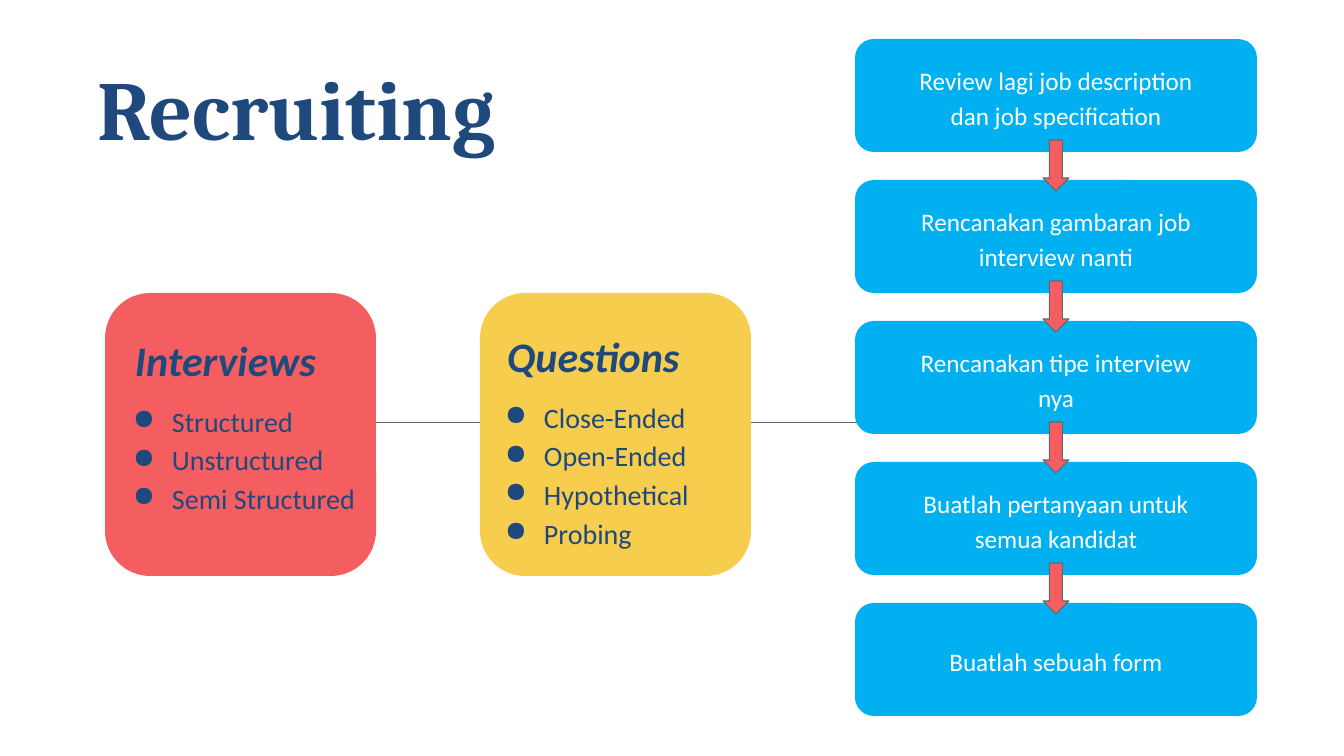
from lxml.etree import SubElement
from pptx import Presentation
from pptx.dml.color import RGBColor
from pptx.enum.shapes import MSO_CONNECTOR as Line, MSO_SHAPE as Kind
from pptx.enum.text import MSO_ANCHOR as Anchor, PP_ALIGN as Align
from pptx.oxml.ns import qn
from pptx.util import Emu, Pt

INK = {
    "navy": "1F497D",
    "red": "F55E61",
    "gold": "F6CD4C",
    "blue": "00B0F0",
    "grey": "5E696C",
    "white": "FFFFFF",
}
STEPS = [
    "Review lagi job description dan job specification",
    "Rencanakan gambaran job interview nanti",
    "Rencanakan tipe interview nya",
    "Buatlah pertanyaan untuk semua kandidat",
    "Buatlah sebuah form",
]
CARDS = [
    ("Interviews", ["Structured", "Unstructured", "Semi Structured"], "red", 105, 20, 24),
    ("Questions", ["Close-Ended", "Open-Ended", "Hypothetical", "Probing"], "gold", 480, 17, 20),
]


def px(n):
    return Emu(round(n * 914400 / 100.8))


def tint(name):
    return RGBColor.from_string(INK[name])


def write(shape, lines, size, color="navy", font="Calibri", bold=False, slant=False,
          align=Align.LEFT, anchor=Anchor.TOP, pad=(10, 10), space=1.15, dots=False):
    frame = shape.text_frame
    frame.word_wrap = True
    frame.vertical_anchor = anchor
    frame.margin_left = frame.margin_right = px(pad[0])
    frame.margin_top = frame.margin_bottom = px(pad[1])
    frame.text = "\n".join(lines)
    for para in frame.paragraphs:
        para.alignment = align
        para.line_spacing = space
        face = para.runs[0].font
        face.name, face.size, face.bold, face.italic = font, Pt(size), bold, slant
        face.color.rgb = tint(color)
        if dots:
            props = para._p.get_or_add_pPr()
            props.set("marL", str(px(50)))
            props.set("indent", str(px(-39)))
            paint = SubElement(props, qn("a:buClr"))
            SubElement(paint, qn("a:srgbClr"), val=INK[color])
            SubElement(props, qn("a:buChar"), char="●")


def block(slide, kind, box, fill, edge=None):
    shape = slide.shapes.add_shape(kind, *map(px, box))
    shape.shadow.inherit = False
    shape.fill.solid()
    shape.fill.fore_color.rgb = tint(fill)
    if edge:
        shape.line.color.rgb = tint(edge)
        shape.line.width = Pt(0.75)
    else:
        shape.line.fill.background()
    return shape


def label(slide, box, lines, size, **form):
    write(slide.shapes.add_textbox(*map(px, box)), lines, size, **form)


def head(slide, box, text):
    title = slide.shapes.title
    title.left, title.top, title.width, title.height = map(px, box)
    write(title, [text], 60, font="Cambria", bold=True, anchor=Anchor.MIDDLE,
          pad=(13, 6), space=1)


def link(slide, start, end, y):
    line = slide.shapes.add_connector(Line.STRAIGHT, px(start), px(y), px(end), px(y))
    line.line.color.rgb = tint("grey")
    line.line.width = Pt(0.75)
    SubElement(line._element.spPr, qn("a:effectLst"))


def card(slide, box, name, items, fill, dx, dy):
    x, y, w, h = box
    block(slide, Kind.ROUNDED_RECTANGLE, box, fill)
    label(slide, (x + dx, y + dy, 207, 72), [name], 30, bold=True, slant=True)
    label(slide, (x + dx - 13, y + dy + 72, w, 15 + 39 * len(items)), items, 20, dots=True)


def flow(slide, box, steps):
    x, y, w, h = box
    gap = 28
    tall = (h - gap * (len(steps) - 1)) / len(steps)
    tops = [y + i * (tall + gap) for i in range(len(steps))]
    for top, step in zip(tops, steps):
        shape = block(slide, Kind.ROUNDED_RECTANGLE, (x, top, w, tall), "blue")
        write(shape, [step], 18, color="white", align=Align.CENTER,
              anchor=Anchor.MIDDLE, pad=(43, 0))
    for top in tops[1:]:
        block(slide, Kind.DOWN_ARROW, (x + w / 2 - 13, top - 40, 26, 51), "red", edge="grey")


def main():
    deck = Presentation()
    deck.slide_width, deck.slide_height = px(1344), px(756)
    slide = deck.slides.add_slide(deck.slide_layouts[5])
    head(slide, (84, 53, 484, 107), "Recruiting")
    link(slide, 350, 864, 423)
    for name, items, fill, x, dx, dy in CARDS:
        card(slide, (x, 293, 271, 283), name, items, fill, dx, dy)
    flow(slide, (855, 39, 402, 677), STEPS)
    deck.save("out.pptx")


if __name__ == "__main__":
    main()
